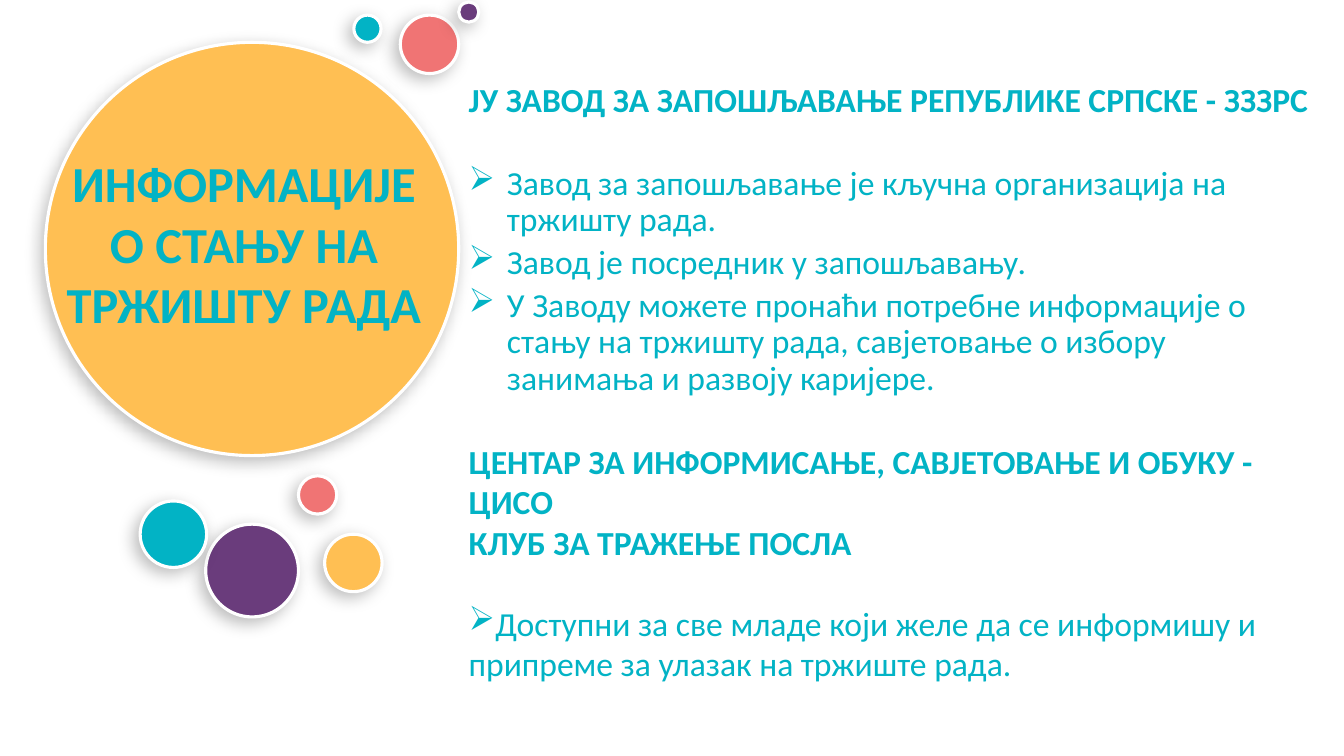
from lxml.etree import SubElement
from pptx import Presentation
from pptx.dml.color import RGBColor
from pptx.enum.shapes import MSO_SHAPE as Shape
from pptx.enum.text import MSO_ANCHOR as Anchor, MSO_AUTO_SIZE as AutoSize, PP_ALIGN as Align
from pptx.oxml.ns import qn
from pptx.util import Inches, Pt

COLORS = {
    "teal": "02B3C5",
    "purple": "6A3C7C",
    "yellow": "FFBF53",
    "coral": "F07474",
    "white": "FFFFFF",
    "shadow": "000000",
}

# Left, top, diameter, colour; from back to front
BUBBLES = [
    (2.04, 5.2, 0.92, "purple"),
    (3.22, 5.3, 0.57, "yellow"),
    (2.96, 4.72, 0.38, "coral"),
    (0.45, 0.42, 4.1, "yellow"),
    (1.39, 4.97, 0.66, "teal"),
    (3.97, 0.15, 0.58, "coral"),
    (3.51, 0.15, 0.27, "teal"),
    (4.55, 0.02, 0.2, "purple"),
]

TITLE = "ИНФОРМАЦИЈЕ О СТАЊУ НА ТРЖИШТУ РАДА"

# Kind of paragraph, space before in points, text
BODY = [
    ("heading", 0, "ЈУ ЗАВОД ЗА ЗАПОШЉАВАЊЕ РЕПУБЛИКЕ СРПСКЕ - ЗЗЗРС"),
    ("bullet", 34, "Завод за запошљавање је кључна организација на тржишту рада."),
    ("bullet", 4.8, "Завод је посредник у запошљавању."),
    ("bullet", 4.8, "У Заводу можете пронаћи потребне информације о стању на тржишту рада, "
                    "савјетовање о избору занимања и развоју каријере."),
    ("heading", 31, "ЦЕНТАР ЗА ИНФОРМИСАЊЕ, САВЈЕТОВАЊЕ И ОБУКУ - ЦИСО"),
    ("heading", 0, "КЛУБ ЗА ТРАЖЕЊЕ ПОСЛА"),
    ("flush bullet", 29, "Доступни за све младе који желе да се информишу и припреме "
                         "за улазак на тржиште рада."),
]


def color(name):
    return RGBColor.from_string(COLORS[name])


def add_shadow(shape):
    shape.shadow.inherit = False
    effects = shape.element.spPr.find(qn("a:effectLst"))
    shadow = SubElement(effects, qn("a:outerShdw"), blurRad=str(Pt(12)), dist=str(Pt(5)),
                        dir=str(135 * 60000), algn="tr", rotWithShape="0")
    tint = SubElement(shadow, qn("a:srgbClr"), val=COLORS["shadow"])
    SubElement(tint, qn("a:alpha"), val="26000")


def add_bubble(page, left, top, diameter, fill):
    bubble = page.shapes.add_shape(Shape.OVAL, Inches(left), Inches(top),
                                   Inches(diameter), Inches(diameter))
    bubble.fill.solid()
    bubble.fill.fore_color.rgb = color(fill)
    bubble.line.color.rgb = color("white")
    bubble.line.width = Pt(2.25)
    add_shadow(bubble)


def add_bullet(para, indent):
    properties = para._p.get_or_add_pPr()
    properties.set("marL", str(Inches(indent)))
    properties.set("indent", str(-Inches(indent)))
    SubElement(properties, qn("a:buChar"), char="➢")


def style_font(para, size, bold):
    para.font.name = "Calibri"
    para.font.size = Pt(size)
    para.font.bold = bold
    para.font.color.rgb = color("teal")


def place_title(page):
    title = page.shapes.title
    title.left, title.top = Inches(0.45), Inches(1.46)
    title.width, title.height = Inches(3.94), Inches(2.57)
    frame = title.text_frame
    frame.text = TITLE
    frame.word_wrap = True
    frame.auto_size = AutoSize.NONE
    frame.vertical_anchor = Anchor.TOP
    para = frame.paragraphs[0]
    para.alignment = Align.CENTER
    style_font(para, 36, True)
    # Bring the title in front of the bubbles
    page.shapes.element.append(title.element)


def add_body(page):
    box = page.shapes.add_textbox(Inches(4.55), Inches(0.73), Inches(8.65), Inches(6.5))
    frame = box.text_frame
    frame.word_wrap = True
    for index, (kind, space, text) in enumerate(BODY):
        para = frame.add_paragraph() if index else frame.paragraphs[0]
        para.text = text
        if kind != "heading":
            add_bullet(para, 0.38 if kind == "bullet" else 0)
        if kind == "bullet":
            para.line_spacing = 0.9
        para.space_before = Pt(space)
        style_font(para, 24, kind == "heading")


def main():
    deck = Presentation()
    deck.slide_width, deck.slide_height = Inches(13.33), Inches(7.5)
    page = deck.slides.add_slide(deck.slide_layouts[5])
    for bubble in BUBBLES:
        add_bubble(page, *bubble)
    place_title(page)
    add_body(page)
    deck.save("out.pptx")


if __name__ == "__main__":
    main()
